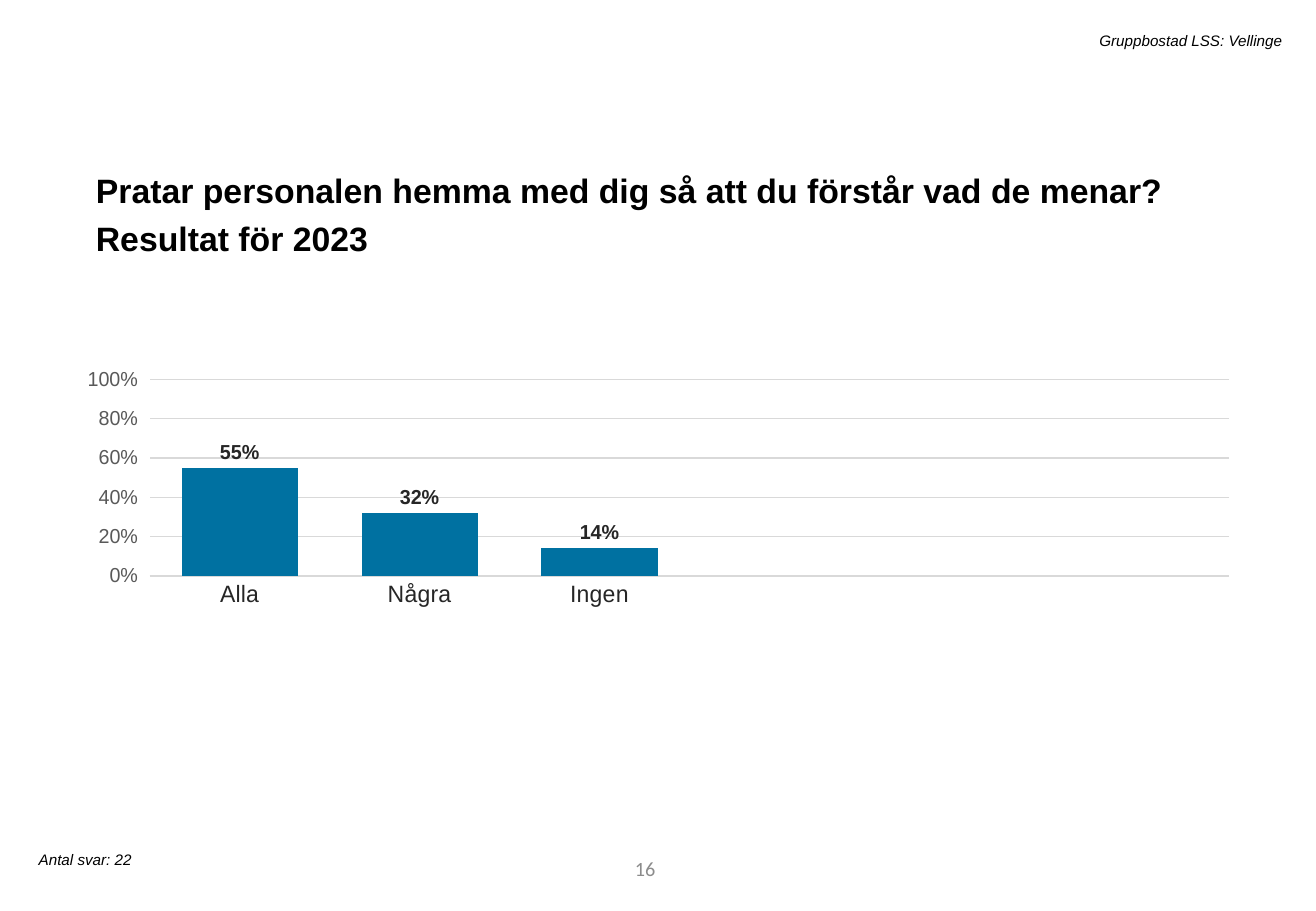
import pptx
import pptx.chart.data
import pptx.dml.color
import pptx.enum.chart
import pptx.enum.text
import pptx.util
import lxml.etree

Cm, Pt = pptx.util.Cm, pptx.util.Pt
Enum = pptx.enum.chart
Align = pptx.enum.text.PP_ALIGN
Anchor = pptx.enum.text.MSO_ANCHOR
Fit = pptx.enum.text.MSO_AUTO_SIZE

HUES = {"ink": "000000", "bar": "0071A1", "grid": "D9D9D9",
        "dark": "262626", "mid": "595959", "pale": "8C8C8C"}
NOTE = {"size": Pt(9), "italic": True}


def hue(name):
    return pptx.dml.color.RGBColor.from_string(HUES[name])


def apply(item, **look):
    for key, value in look.items():
        setattr(item, key, value)


class Page:
    """Hold the style and the current slide."""

    def __init__(self, wide, high):
        self.deck = pptx.Presentation()
        apply(self.deck, slide_width=Cm(wide), slide_height=Cm(high))
        self.slide = self.deck.slides.add_slide(self.deck.slide_layouts[5])

    def font(self, font, color="ink", **look):
        apply(font, **{"name": "Arial", **look})
        font.color.rgb = hue(color)

    def fill(self, frame, text, look, align=Align.LEFT, anchor=Anchor.TOP,
             fit=Fit.SHAPE_TO_FIT_TEXT):
        apply(frame, text=text, word_wrap=True, auto_size=fit,
              vertical_anchor=anchor)
        para = frame.paragraphs[0]
        para.alignment = align
        self.font(para.runs[0].font, **look)
        return para

    def title(self, box, text, look):
        shape = self.slide.shapes.title
        keys = ("left", "top", "width", "height")
        apply(shape, **dict(zip(keys, map(Cm, box))))
        para = self.fill(shape.text_frame, text, look)
        apply(para, line_spacing=1.2, space_before=Pt(10))

    def text(self, box, text, look, **rest):
        shape = self.slide.shapes.add_textbox(*map(Cm, box))
        self.fill(shape.text_frame, text, look, **rest)

    def line(self, line):
        line.color.rgb = hue("grid")
        line.width = Pt(0.75)

    def chart(self, box, cats, vals, plot):
        data = pptx.chart.data.CategoryChartData(number_format="0%")
        data.categories = cats
        data.add_series("Series 1", vals)
        chart = self.slide.shapes.add_chart(
            Enum.XL_CHART_TYPE.COLUMN_CLUSTERED, *map(Cm, box), data).chart
        apply(chart, has_legend=False, has_title=False)
        self.font(chart.font, size=Pt(10))
        self.axes(chart)
        self.bars(chart.plots[0])
        self.place(chart, plot)

    def axes(self, chart):
        cat, val = chart.category_axis, chart.value_axis
        mark = Enum.XL_TICK_MARK
        cat.major_tick_mark = mark.NONE
        self.line(cat.format.line)
        self.font(cat.tick_labels.font, "dark", size=Pt(14))
        apply(val, minimum_scale=0, maximum_scale=1, major_unit=0.2,
              major_tick_mark=mark.OUTSIDE, has_major_gridlines=True)
        val.format.line.fill.background()
        self.line(val.major_gridlines.format.line)
        apply(val.tick_labels, number_format="0%",
              number_format_is_linked=False)
        self.font(val.tick_labels.font, "mid", size=Pt(12))

    def bars(self, plot):
        apply(plot, gap_width=55, vary_by_categories=False,
              has_data_labels=True)
        fill = plot.series[0].format.fill
        fill.solid()
        fill.fore_color.rgb = hue("bar")
        apply(plot.data_labels, show_value=True, number_format="0%",
              number_format_is_linked=False,
              position=Enum.XL_LABEL_POSITION.OUTSIDE_END)
        self.font(plot.data_labels.font, "dark", size=Pt(12), bold=True)

    def place(self, chart, plot):
        area = chart._chartSpace.chart.plotArea
        space = "{%s}" % area.nsmap["c"]
        for old in area.findall(space + "layout"):
            area.remove(old)
        outer = lxml.etree.Element(space + "layout")
        inner = lxml.etree.SubElement(outer, space + "manualLayout")
        rules = {"layoutTarget": "inner", "xMode": "edge", "yMode": "edge",
                 **dict(zip("xywh", plot))}
        for key, value in rules.items():
            lxml.etree.SubElement(inner, space + key, val=str(value))
        area.insert(0, outer)


def main():
    page = Page(27.51, 19.05)
    page.text((7.75, 17.65, 6.2, 1.02), "16",
              {"name": "Calibri", "size": Pt(12), "color": "pale"},
              align=Align.RIGHT, anchor=Anchor.MIDDLE, fit=Fit.NONE)
    page.title((1.75, 3.25, 23.88, 1.19),
               "Pratar personalen hemma med dig så att du förstår "
               "vad de menar? Resultat för 2023",
               {"size": Pt(20), "bold": True})
    page.chart((1.83, 6.43, 23.88, 10.03),
               ("Alla", "Några", "Ingen", "", "", ""),
               (0.55, 0.32, 0.14, None, None, None),
               (0.03, 0.15, 0.97, 0.41))
    page.text((0.56, 17.65, 7.21, 0.64), "Antal svar: 22", NOTE)
    page.text((4.55, 0.53, 22.5, 0.64), "Gruppbostad LSS: Vellinge", NOTE,
              align=Align.RIGHT)
    page.deck.save("out.pptx")


if __name__ == "__main__":
    main()
